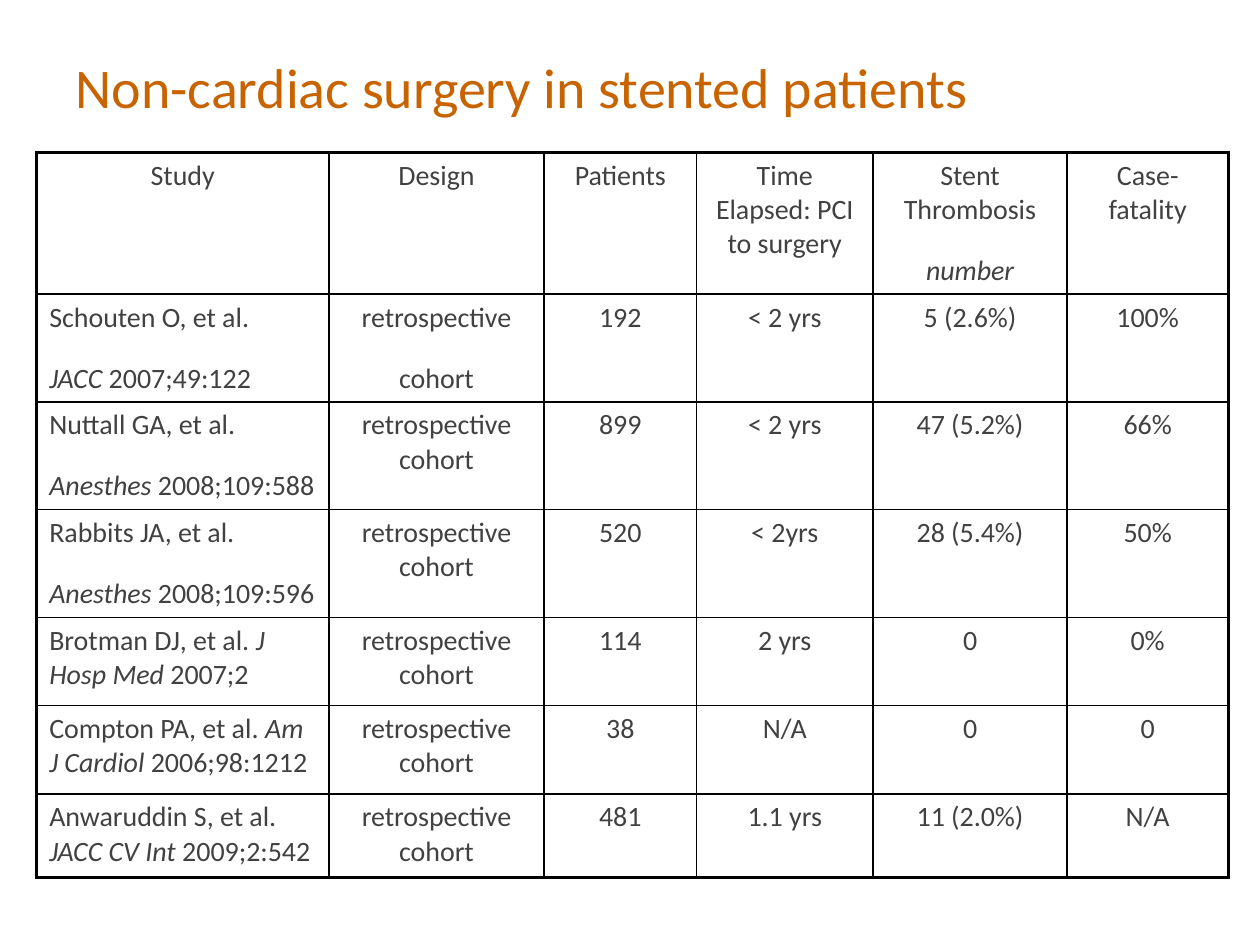
from pptx import Presentation
from pptx import util as u
from pptx.dml.color import RGBColor
from pptx.enum import text as t
from pptx.oxml import parse_xml
from pptx.oxml.ns import nsdecls

TITLE = "Non-cardiac surgery in stented patients"
COHORT = "retrospective cohort"
ROWS = [
    ("Study", "Design", "Patients", "Time Elapsed: PCI to surgery",
     "Stent Thrombosis|*number*", "Case-fatality"),
    ("Schouten O, et al.|*JACC* 2007;49:122", "retrospective|cohort",
     "192", "< 2 yrs", "5 (2.6%)", "100%"),
    ("Nuttall GA, et al.|*Anesthes* 2008;109:588", COHORT,
     "899", "< 2 yrs", "47 (5.2%)", "66%"),
    ("Rabbits JA, et al.|*Anesthes* 2008;109:596", COHORT,
     "520", "< 2yrs", "28 (5.4%)", "50%"),
    ("Brotman DJ, et al. *J Hosp Med* 2007;2", COHORT,
     "114", "2 yrs", "0", "0%"),
    ("Compton PA, et al. *Am J Cardiol* 2006;98:1212", COHORT,
     "38", "N/A", "0", "0"),
    ("Anwaruddin S, et al. *JACC CV Int* 2009;2:542", COHORT,
     "481", "1.1 yrs", "11 (2.0%)", "N/A"),
]
WIDTHS = [5.89, 4.34, 3.07, 3.56, 3.91, 3.25]
HEIGHTS = [2.84, 2.16, 2.16, 2.16, 1.78, 1.78, 1.68]
THIN, THICK = 1, 2.25


def color(code):
    return RGBColor.from_string(code)


def add_run(para, words, size, code, slant=False):
    run = para.add_run()
    run.text = words
    font = run.font
    font.name, font.size, font.italic = "Calibri", u.Pt(size), slant
    font.color.rgb = color(code)


def write(cell, words, align):
    frame = cell.text_frame
    for i, line in enumerate(words.split("|")):
        para = frame.add_paragraph() if i else frame.paragraphs[0]
        para.alignment = align
        para.space_before = u.Pt(3.2 if i else 0)
        para.space_after = u.Pt(12)
        for j, part in enumerate(line.split("*")):
            if part:
                add_run(para, part, 16, "414141", j % 2 == 1)


def border(cell, outer):
    props = cell._tc.get_or_add_tcPr()
    for side, edge in outer.items():
        width = u.Pt(THICK if edge else THIN)
        props.append(parse_xml(
            f'<a:ln{side} {nsdecls("a")} w="{width}"><a:solidFill>'
            f'<a:srgbClr val="000000"/></a:solidFill></a:ln{side}>'))


def main():
    deck = Presentation()
    deck.slide_width, deck.slide_height = u.Cm(25.4), u.Cm(19.05)
    slide = deck.slides.add_slide(deck.slide_layouts[5])

    title = slide.shapes.title
    title.left, title.top = u.Cm(1.27), u.Cm(0.76)
    title.width, title.height = u.Cm(22.86), u.Cm(1.96)
    title.text_frame.vertical_anchor = t.MSO_ANCHOR.MIDDLE
    para = title.text_frame.paragraphs[0]
    para.alignment = t.PP_ALIGN.LEFT
    add_run(para, TITLE, 32, "C86400")

    table = slide.shapes.add_table(
        len(ROWS), len(WIDTHS), u.Cm(0.74), u.Cm(3.07),
        u.Cm(sum(WIDTHS)), u.Cm(sum(HEIGHTS))).table
    table.first_row = table.horz_banding = False
    for col, width in zip(table.columns, WIDTHS):
        col.width = u.Cm(width)
    for row, height in zip(table.rows, HEIGHTS):
        row.height = u.Cm(height)

    end, foot = len(WIDTHS) - 1, len(ROWS) - 1
    for r, row in enumerate(ROWS):
        for c, words in enumerate(row):
            cell = table.cell(r, c)
            left = r > 0 and c == 0
            write(cell, words, t.PP_ALIGN.LEFT if left else t.PP_ALIGN.CENTER)
            border(cell, {"L": c == 0, "R": c == end, "T": r == 0, "B": r == foot})
            cell.fill.background()

    deck.save("out.pptx")


if __name__ == "__main__":
    main()
